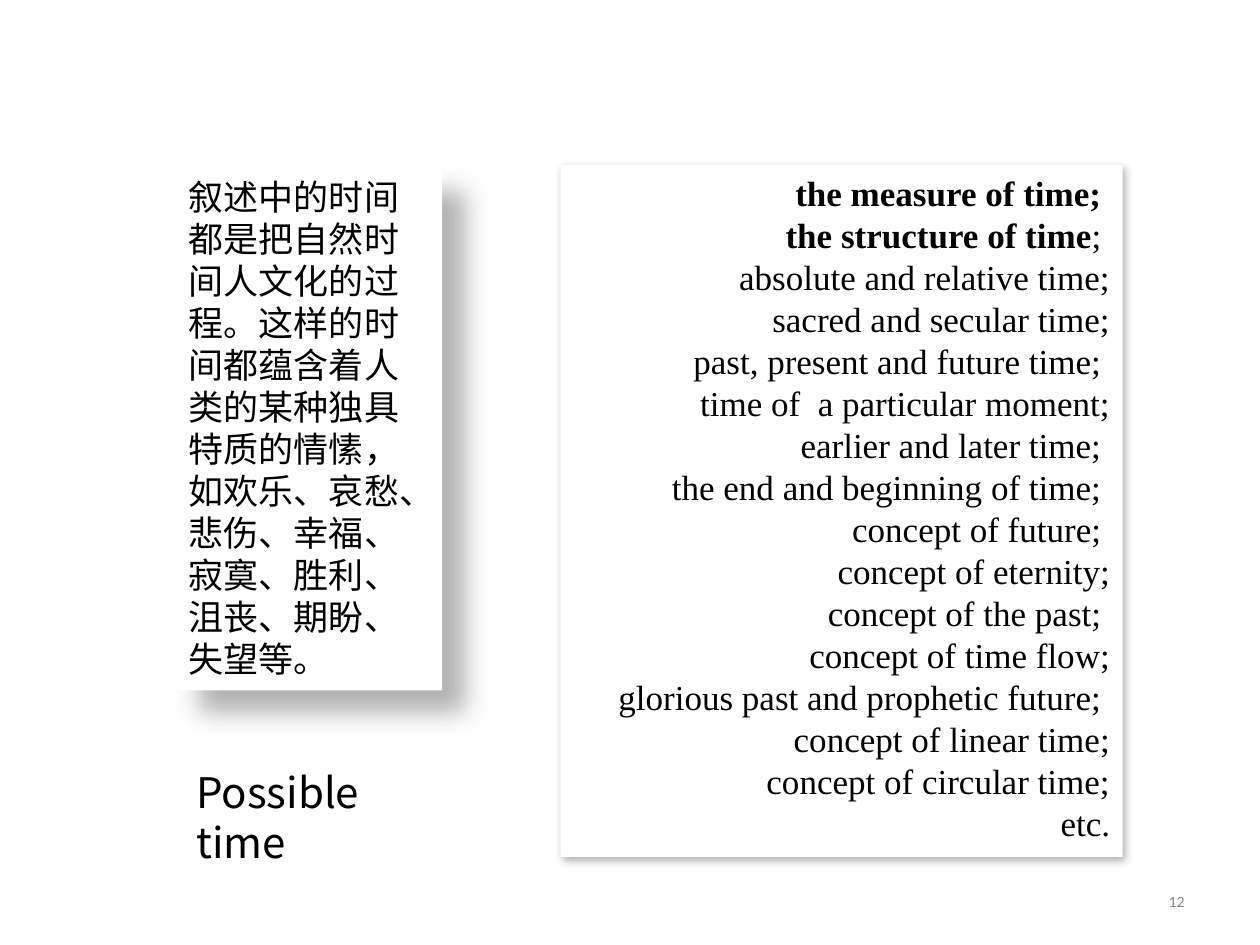
from lxml.etree import SubElement
from pptx import Presentation
from pptx.dml.color import RGBColor
from pptx.enum.shapes import MSO_SHAPE as SHAPE
from pptx.enum.text import MSO_ANCHOR as ANCHOR, PP_ALIGN as ALIGN
from pptx.oxml.ns import qn
from pptx.util import Pt

BLACK = RGBColor(0x00, 0x00, 0x00)
WHITE = RGBColor(0xFF, 0xFF, 0xFF)
GRAY = RGBColor(0x89, 0x89, 0x89)

NARRATIVE = [
    "叙述中的时间都是把自然时间人文化的过程。这样的时间都蕴含着人类的某种独具特质的情愫，"
    "如欢乐、哀愁、悲伤、幸福、寂寞、胜利、沮丧、期盼、失望等。"
]
CONCEPTS = [
    [("the measure of time; ", True)],
    [("the structure of time", True), ("; ", False)],
    "absolute and relative time;",
    "sacred and secular time;",
    "past, present and future time; ",
    "time of  a particular moment;",
    "earlier and later time; ",
    "the end and beginning of time; ",
    "concept of future; ",
    "concept of eternity;",
    "concept of the past; ",
    "concept of time flow;",
    "glorious past and prophetic future; ",
    "concept of linear time;",
    "concept of circular time;",
    "etc.",
]


def write(sp, paragraphs, *, font, size, color=BLACK, align=ALIGN.LEFT,
          anchor=ANCHOR.TOP, spacing=None):
    """Fill a shape with paragraphs, each a string or a list of (text, bold) runs."""
    tf = sp.text_frame
    tf.word_wrap = True
    tf.vertical_anchor = anchor
    for i, content in enumerate(paragraphs):
        p = tf.paragraphs[0] if i == 0 else tf.add_paragraph()
        p.alignment = align
        if spacing:
            p.line_spacing = Pt(spacing)
        runs = [(content, False)] if isinstance(content, str) else content
        for text, bold in runs:
            r = p.add_run()
            r.text = text
            r.font.name, r.font.size, r.font.bold = font, Pt(size), bold
            r.font.color.rgb = color
            SubElement(r.font._element, qn("a:ea"), typeface=font)


def add_shadow(sp, blur, dist, angle):
    """Give a shape a soft black outer shadow."""
    sp.shadow.inherit = False
    effects = sp._element.spPr.find(qn("a:effectLst"))
    outer = SubElement(effects, qn("a:outerShdw"), blurRad=str(int(Pt(blur))),
                       dist=str(int(Pt(dist))), dir=str(angle * 60000),
                       algn="tl", rotWithShape="0")
    color = SubElement(outer, qn("a:srgbClr"), val=str(BLACK))
    SubElement(color, qn("a:alpha"), val="30000")


def add_panel(s, box, paragraphs, shadow, **fmt):
    """Add a white shadowed rectangle with text."""
    sp = s.shapes.add_shape(SHAPE.RECTANGLE, *map(Pt, box))
    sp.fill.solid()
    sp.fill.fore_color.rgb = WHITE
    sp.line.fill.background()
    add_shadow(sp, *shadow)
    write(sp, paragraphs, **fmt)


def add_label(s, box, text, **fmt):
    """Add a plain text box."""
    write(s.shapes.add_textbox(*map(Pt, box)), [text], **fmt)


def main():
    """Build and save the slide."""
    prs = Presentation()
    prs.slide_width, prs.slide_height = Pt(720), Pt(540)
    s = prs.slides.add_slide(prs.slide_layouts[6])
    add_label(s, (516.2, 500.4, 167.8, 28.8), "12", font="Calibri", size=9,
              color=GRAY, align=ALIGN.RIGHT, anchor=ANCHOR.MIDDLE)
    add_panel(s, (320.4, 94.3, 321.1, 395.3), CONCEPTS, (4.5, 2.6, 53),
              font="Times New Roman", size=20, align=ALIGN.RIGHT, spacing=24)
    add_label(s, (105.1, 434.2, 154.1, 36.7), "Possible time",
              font="Noto Sans CJK JP", size=24, spacing=28.8)
    add_panel(s, (100.8, 96.5, 151.9, 298.1), NARRATIVE, (15, 18, 45),
              font="Noto Sans CJK SC", size=20, spacing=24)
    prs.save("out.pptx")


if __name__ == "__main__":
    main()
